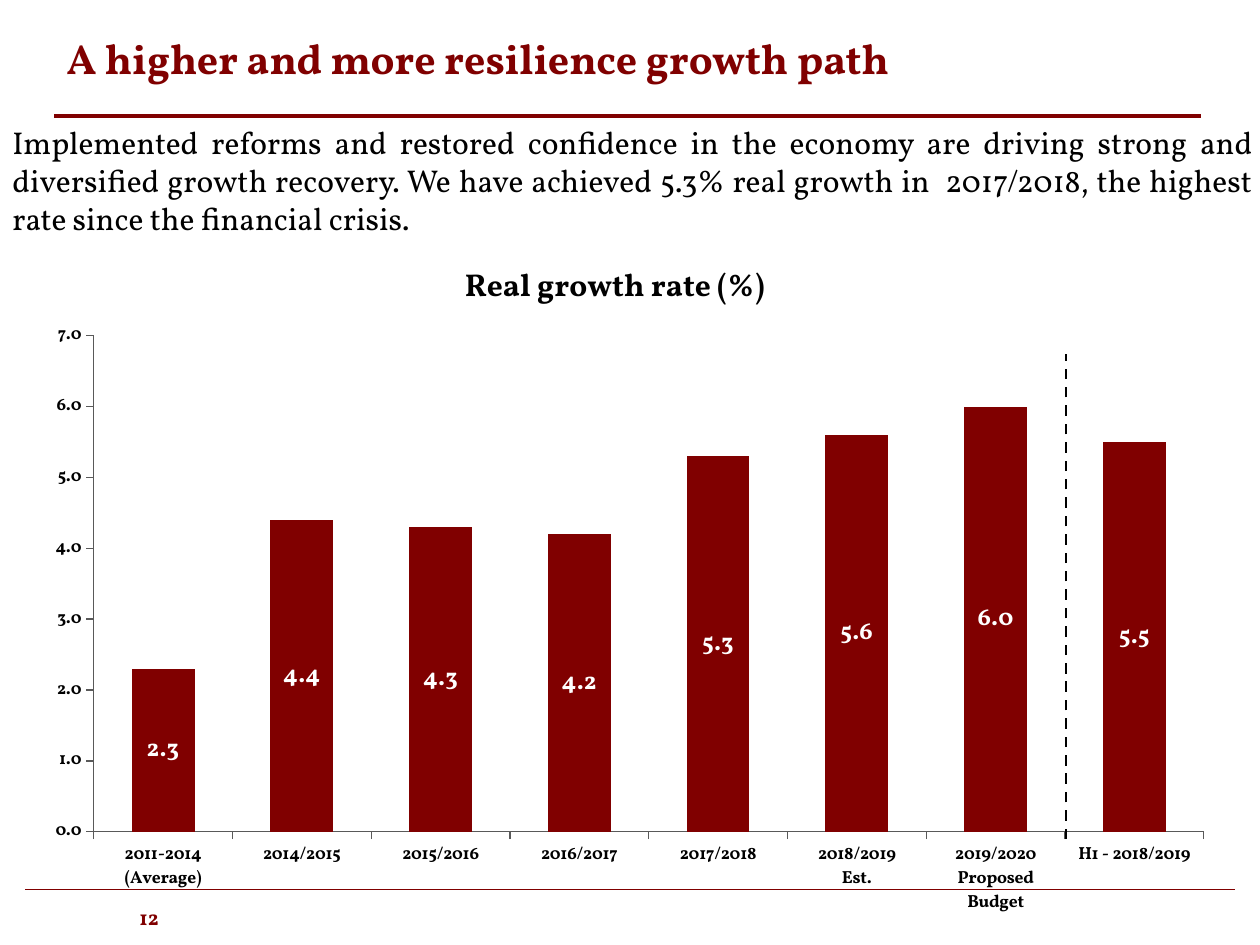
"""Builds the slide on the real growth rate."""
from lxml.etree import SubElement
from pptx import Presentation
from pptx.chart.data import CategoryChartData
from pptx.dml.color import RGBColor
from pptx.enum.chart import XL_CHART_TYPE as ChartType, XL_LABEL_POSITION as LabelPosition
from pptx.enum.chart import XL_TICK_MARK as Tick
from pptx.enum.dml import MSO_LINE_DASH_STYLE as Dash
from pptx.enum.shapes import MSO_CONNECTOR_TYPE as Connector
from pptx.enum.text import MSO_VERTICAL_ANCHOR as Anchor, PP_PARAGRAPH_ALIGNMENT as Align
from pptx.oxml import parse_xml
from pptx.oxml.ns import nsdecls, qn
from pptx.util import Emu, Pt

COLORS = {"maroon": "800000", "black": "000000", "white": "FFFFFF", "axis": "595959"}
EMU_PER_PX = 9144
GROWTH = {
    "2011-2014\n(Average)": 2.3,
    "2014/2015": 4.4,
    "2015/2016": 4.3,
    "2016/2017": 4.2,
    "2017/2018": 5.3,
    "2018/2019\nEst.": 5.6,
    "2019/2020\nProposed Budget": 6.0,
    "H1 - 2018/2019": 5.5,
}


def px(*lengths):
    return [Emu(length * EMU_PER_PX) for length in lengths]


def color(name):
    return RGBColor.from_string(COLORS[name])


def style_font(font, size, ink="black", bold=False):
    font.name, font.size, font.bold = "Vollkorn", Pt(size), bold
    font.color.rgb = color(ink)


def write(frame, text, align=None, **style):
    para = frame.paragraphs[0]
    para.alignment = align
    span = para.add_run()
    span.text = text
    style_font(span.font, **style)


class Slide:
    def __init__(self, deck):
        self.page = deck.slides.add_slide(deck.slide_layouts[6])

    def line(self, start, end, width, ink="maroon", dash=None):
        rule = self.page.shapes.add_connector(Connector.STRAIGHT, *px(*start, *end))
        rule.line.color.rgb = color(ink)
        rule.line.width = Pt(width)
        if dash:
            rule.line.dash_style = dash
        SubElement(rule._element.spPr, qn("a:effectLst"))

    def text(self, box, text, align=Align.JUSTIFY, anchor=Anchor.TOP, inset=True, **style):
        frame = self.page.shapes.add_textbox(*px(*box)).text_frame
        frame.word_wrap = True
        frame.vertical_anchor = anchor
        if not inset:
            frame.margin_left = frame.margin_right = frame.margin_top = frame.margin_bottom = 0
        write(frame, text, align, **style)

    def column_chart(self, box, title, values, plot):
        data = CategoryChartData(number_format="0.0")
        data.categories = list(values)
        data.add_series("Series 1", list(values.values()))
        chart = self.page.shapes.add_chart(ChartType.COLUMN_STACKED, *px(*box), data).chart
        style_font(chart.font, 10)
        chart.has_legend = False
        chart.has_title = True
        write(chart.chart_title.text_frame, title, size=18, bold=True)
        for axis in (chart.category_axis, chart.value_axis):
            style_font(axis.tick_labels.font, 10, bold=True)
            axis.has_major_gridlines = False
            axis.major_tick_mark, axis.minor_tick_mark = Tick.OUTSIDE, Tick.NONE
            axis.format.line.color.rgb = color("axis")
            axis.format.line.width = Pt(0.75)
        scale = chart.value_axis
        scale.minimum_scale, scale.maximum_scale, scale.major_unit = 0, 7, 1
        scale.tick_labels.number_format = "0.0"
        scale.tick_labels.number_format_is_linked = False

        columns = chart.plots[0]
        columns.gap_width, columns.overlap = 121, 100
        columns.vary_by_categories = False
        fill = columns.series[0].format.fill
        fill.solid()
        fill.fore_color.rgb = color("maroon")
        labels = columns.series[0].data_labels
        labels.show_value = True
        labels.number_format, labels.number_format_is_linked = "0.0", False
        labels.position = LabelPosition.CENTER
        style_font(labels.font, 14, "white", True)
        self.place_plot(chart, plot)

    def place_plot(self, chart, plot):
        area = chart._chartSpace.chart.plotArea
        for layout in area.findall(qn("c:layout")):
            area.remove(layout)
        modes = "".join(f'<c:{side}Mode val="edge"/>' for side in "xy")
        sizes = "".join(f'<c:{side} val="{part}"/>' for side, part in zip("xywh", plot))
        area.insert(0, parse_xml(
            f'<c:layout {nsdecls("c")}><c:manualLayout><c:layoutTarget val="inner"/>'
            f"{modes}{sizes}</c:manualLayout></c:layout>"))


def main():
    deck = Presentation()
    deck.slide_width, deck.slide_height = px(1000, 750)
    slide = Slide(deck)
    slide.line((43, 92), (953, 92), 2)
    slide.line((20, 706), (980, 706), 0.75)
    slide.column_chart((-2, 188, 980, 541), "Real growth rate (%)", GROWTH,
                       (0.078, 0.145, 0.899, 0.728))
    slide.text((43, 714, 83, 24), "12", Align.RIGHT, Anchor.BOTTOM, inset=False,
               size=12, ink="maroon", bold=True)
    slide.text((43, 21, 989, 50), "A higher and more resilience growth path",
               size=24, ink="maroon", bold=True)
    slide.text((0, 93, 1004, 101),
               "Implemented reforms and restored confidence in the economy are driving strong "
               "and diversified growth recovery. We have achieved 5.3% real growth in  2017/2018, "
               "the highest rate since the financial crisis.", size=18)
    slide.line((846, 666), (846, 281), 1.5, "black", Dash.DASH)
    deck.save("out.pptx")


if __name__ == "__main__":
    main()
